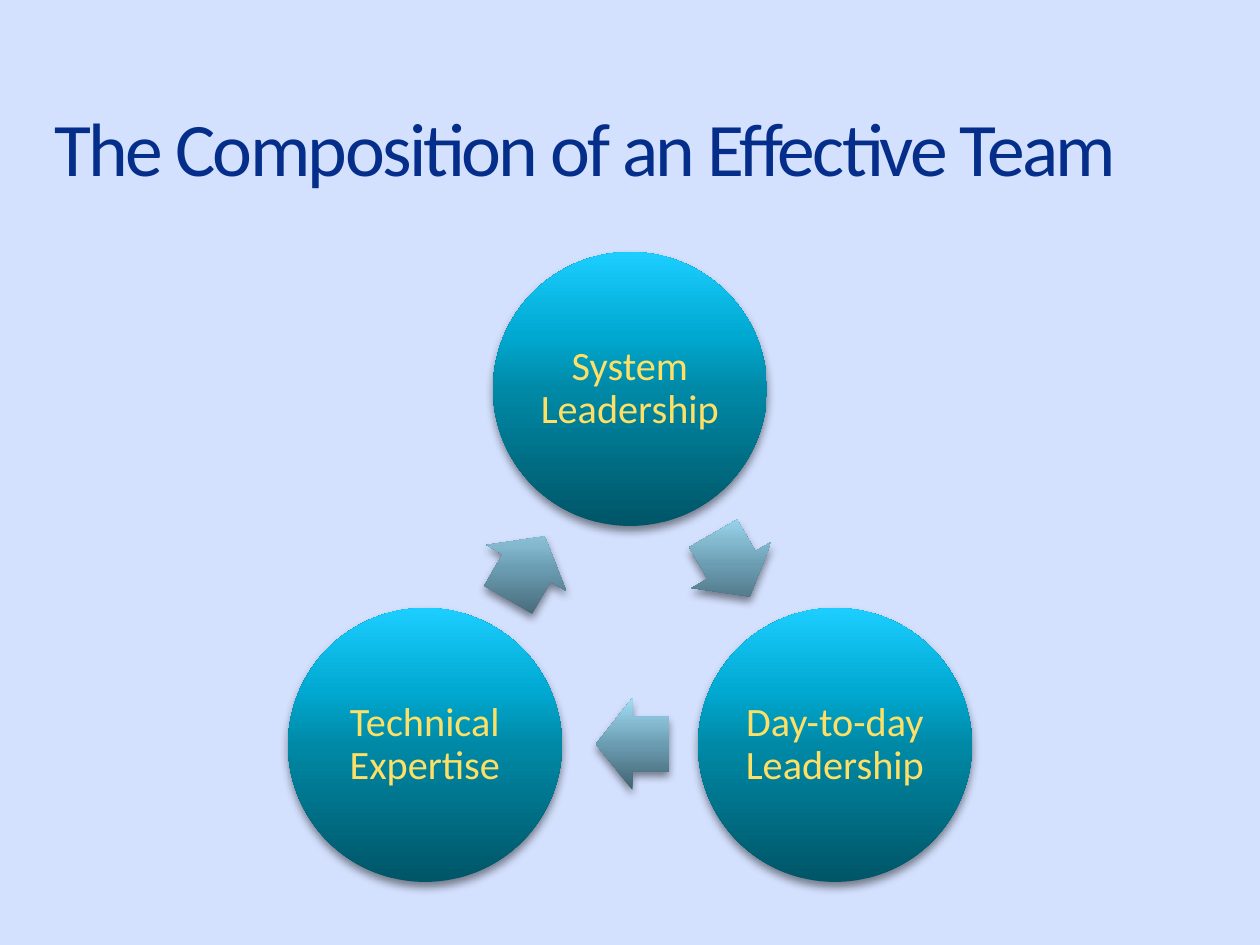
"""Build a slide showing the three-part cycle of an effective team."""
import math

from lxml import etree
from pptx import Presentation
from pptx import util as u
from pptx.dml.color import RGBColor
from pptx.enum import shapes, text
from pptx.oxml import parse_xml
from pptx.oxml.ns import nsdecls, qn

PX = 914400 // 126
FONT = "Calibri"
CENTER = (630, 626)
RADIUS = 237
CIRCLE = 274
ARROW = (73, 92)
ARROW_SETBACK = 2
ROLES = ["System Leadership", "Day-to-day Leadership", "Technical Expertise"]
CIRCLE_STOPS = {0: "005567", 50: "0089A6", 70: "00A9D2", 100: "1CCEFF"}
ARROW_STOPS = {0: "416270", 50: "6B9DB2", 70: "82B7CD", 100: "A1DEF7"}


def px(n):
    """Turn pixels into EMU."""
    return u.Emu(round(n) * PX)


def rgb(value):
    """Turn a hex string into a colour."""
    return RGBColor.from_string(value)


def style_text(tf, words, size, color, margins):
    """Write one wrapped paragraph and return it."""
    tf.word_wrap = True
    tf.margin_left = tf.margin_right = u.Inches(margins[0])
    tf.margin_top = tf.margin_bottom = u.Inches(margins[1])
    p = tf.paragraphs[0]
    p.text = words
    p.line_spacing = 0.9
    p.font.size = u.Pt(size)
    p.font.name = FONT
    p.font.color.rgb = rgb(color)
    return p


def add_title(s, words):
    """Add the slide title with tightened letters."""
    tf = s.shapes.add_textbox(px(42), px(105), px(1155), px(92)).text_frame
    p = style_text(tf, words, 43.2, "052E8B", (0.1, 0.05))
    p.runs[0].font._element.set("spc", "-150")


def add_glossy(s, kind, center, size, stops):
    """Add a centred shape with an upright gradient and a soft shadow."""
    (x, y), (w, h) = center, size
    sp = s.shapes.add_shape(kind, px(x - w / 2), px(y - h / 2), px(w), px(h))
    sp.line.fill.background()
    grad = parse_xml(f'<a:gradFill {nsdecls("a")} rotWithShape="0"><a:gsLst/>'
                     '<a:lin ang="16200000" scaled="0"/></a:gradFill>')
    for pos, color in stops.items():
        gs = etree.SubElement(grad[0], qn("a:gs"), pos=str(pos * 1000))
        etree.SubElement(gs, qn("a:srgbClr"), val=color)
    sp._element.spPr.find(qn("a:prstGeom")).addnext(grad)
    sp._element.spPr.append(parse_xml(
        f'<a:effectLst {nsdecls("a")}><a:outerShdw blurRad="63500" dist="38100" '
        'dir="5400000" rotWithShape="0"><a:srgbClr val="000000">'
        '<a:alpha val="45000"/></a:srgbClr></a:outerShdw></a:effectLst>'))
    return sp


def add_role(s, center, words):
    """Add a labelled circle."""
    sp = add_glossy(s, shapes.MSO_SHAPE.OVAL, center, (CIRCLE, CIRCLE), CIRCLE_STOPS)
    tf = sp.text_frame
    tf.vertical_anchor = text.MSO_ANCHOR.MIDDLE
    p = style_text(tf, words, 23, "FFE066", (0.03, 0.03))
    p.alignment = text.PP_ALIGN.CENTER


def add_arrow(s, start, end):
    """Add a block arrow between two circle centres."""
    angle = math.atan2(end[1] - start[1], end[0] - start[0])
    x = (start[0] + end[0]) / 2 - ARROW_SETBACK * math.cos(angle)
    y = (start[1] + end[1]) / 2 - ARROW_SETBACK * math.sin(angle)
    sp = add_glossy(s, shapes.MSO_SHAPE.RIGHT_ARROW, (x, y), ARROW, ARROW_STOPS)
    sp.adjustments[0], sp.adjustments[1] = 0.6, 0.5
    sp.rotation = round(math.degrees(angle)) % 360


def main():
    """Build and save the slide."""
    prs = Presentation()
    prs.slide_width, prs.slide_height = px(1260), px(945)
    s = prs.slides.add_slide(prs.slide_layouts[6])
    s.background.fill.solid()
    s.background.fill.fore_color.rgb = rgb("D4E1FE")
    add_title(s, "The Composition of an Effective Team")
    turns = [math.tau * i / len(ROLES) for i in range(len(ROLES))]
    centers = [(CENTER[0] + RADIUS * math.sin(t), CENTER[1] - RADIUS * math.cos(t))
               for t in turns]
    for i, words in enumerate(ROLES):
        add_role(s, centers[i], words)
        add_arrow(s, centers[i], centers[(i + 1) % len(ROLES)])
    prs.save("out.pptx")


if __name__ == "__main__":
    main()
